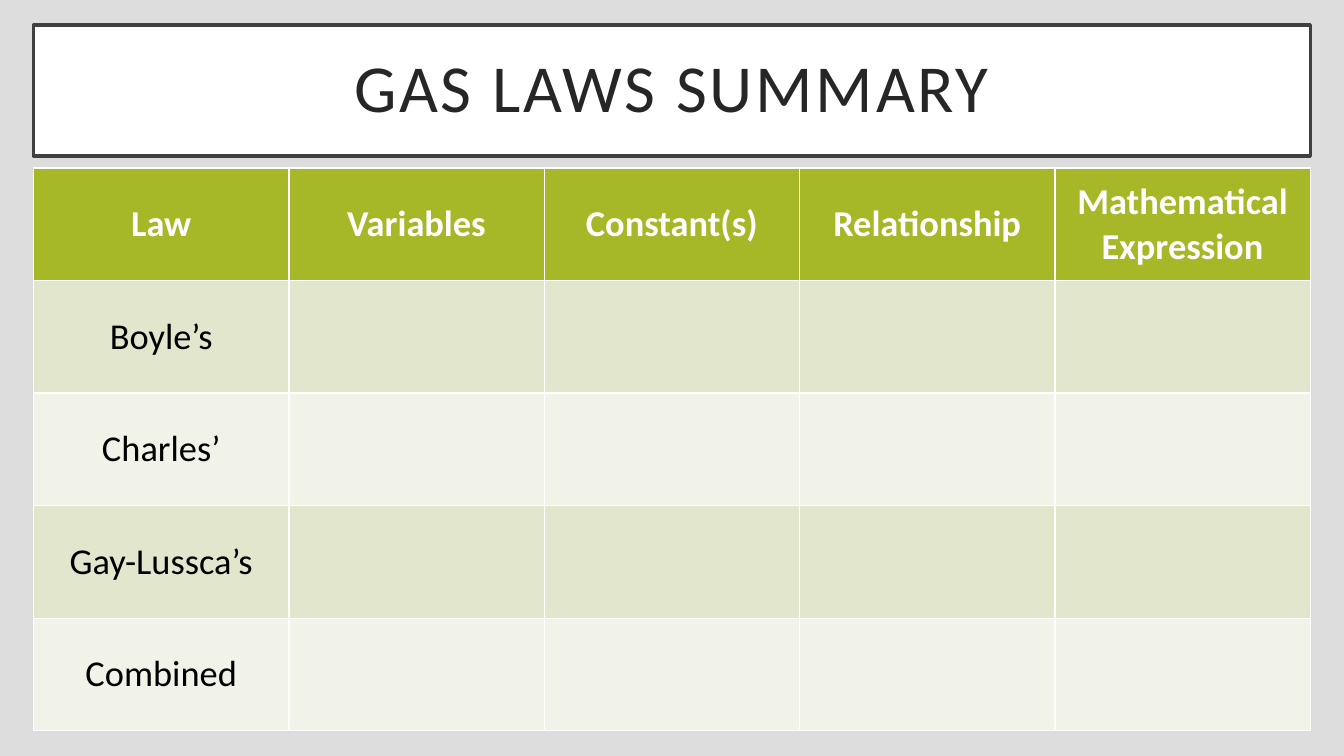
from pptx import Presentation
from pptx.dml.color import RGBColor
from pptx.enum.shapes import MSO_SHAPE
from pptx.enum.text import MSO_ANCHOR, PP_ALIGN
from pptx.util import Pt

COLORS = {
    "background": "DDDDDD",
    "white": "FFFFFF",
    "frame": "404040",
    "title": "262626",
    "header": "A6B727",
    "odd_row": "E1E6CD",
    "even_row": "F1F3E8",
    "body": "000000",
}
HEADINGS = ["Law", "Variables", "Constant(s)", "Relationship", "Mathematical Expression"]
LAWS = ["Boyle’s", "Charles’", "Gay-Lussca’s", "Combined"]
LEFT, WIDTH = Pt(24), Pt(912)
TABLE_HEIGHT = Pt(402)


def paint(fill, color):
    fill.solid()
    fill.fore_color.rgb = RGBColor.from_string(COLORS[color])


def style_paragraph(paragraph, size, color, bold=False):
    paragraph.alignment = PP_ALIGN.CENTER
    font = paragraph.font
    font.name, font.size, font.bold = "Calibri", Pt(size), bold
    font.color.rgb = RGBColor.from_string(COLORS[color])


prs = Presentation()
prs.slide_width, prs.slide_height = Pt(960), Pt(540)
slide = prs.slides.add_slide(prs.slide_layouts[6])
paint(slide.background.fill, "background")

# Title banner
banner = slide.shapes.add_shape(MSO_SHAPE.RECTANGLE, LEFT, Pt(18), WIDTH, Pt(93.6))
banner.shadow.inherit = False
paint(banner.fill, "white")
paint(banner.line.fill, "frame")
banner.line.width = Pt(2.5)
frame = banner.text_frame
frame.word_wrap = True
frame.vertical_anchor = MSO_ANCHOR.MIDDLE
frame.margin_left = frame.margin_right = frame.margin_top = frame.margin_bottom = Pt(14.4)
title = frame.paragraphs[0]
title_run = title.add_run()
title_run.text = "GAS LAWS SUMMARY"
title_run.font._element.set("spc", "200")
title.line_spacing = 0.9
style_paragraph(title, 48, "title")

# Summary table: the default table style supplies the white rules
rows = [HEADINGS] + [[law] + [""] * (len(HEADINGS) - 1) for law in LAWS]
summary = slide.shapes.add_table(
    len(rows), len(HEADINGS), LEFT, Pt(120), WIDTH, TABLE_HEIGHT
).table
for row_index, texts in enumerate(rows):
    is_header = row_index == 0
    row_color = "header" if is_header else ("even_row", "odd_row")[row_index % 2]
    for column_index, text in enumerate(texts):
        cell = summary.cell(row_index, column_index)
        paint(cell.fill, row_color)
        cell.vertical_anchor = MSO_ANCHOR.MIDDLE
        cell.text = text
        style_paragraph(
            cell.text_frame.paragraphs[0], 26, "white" if is_header else "body", is_header
        )

prs.save("out.pptx")
